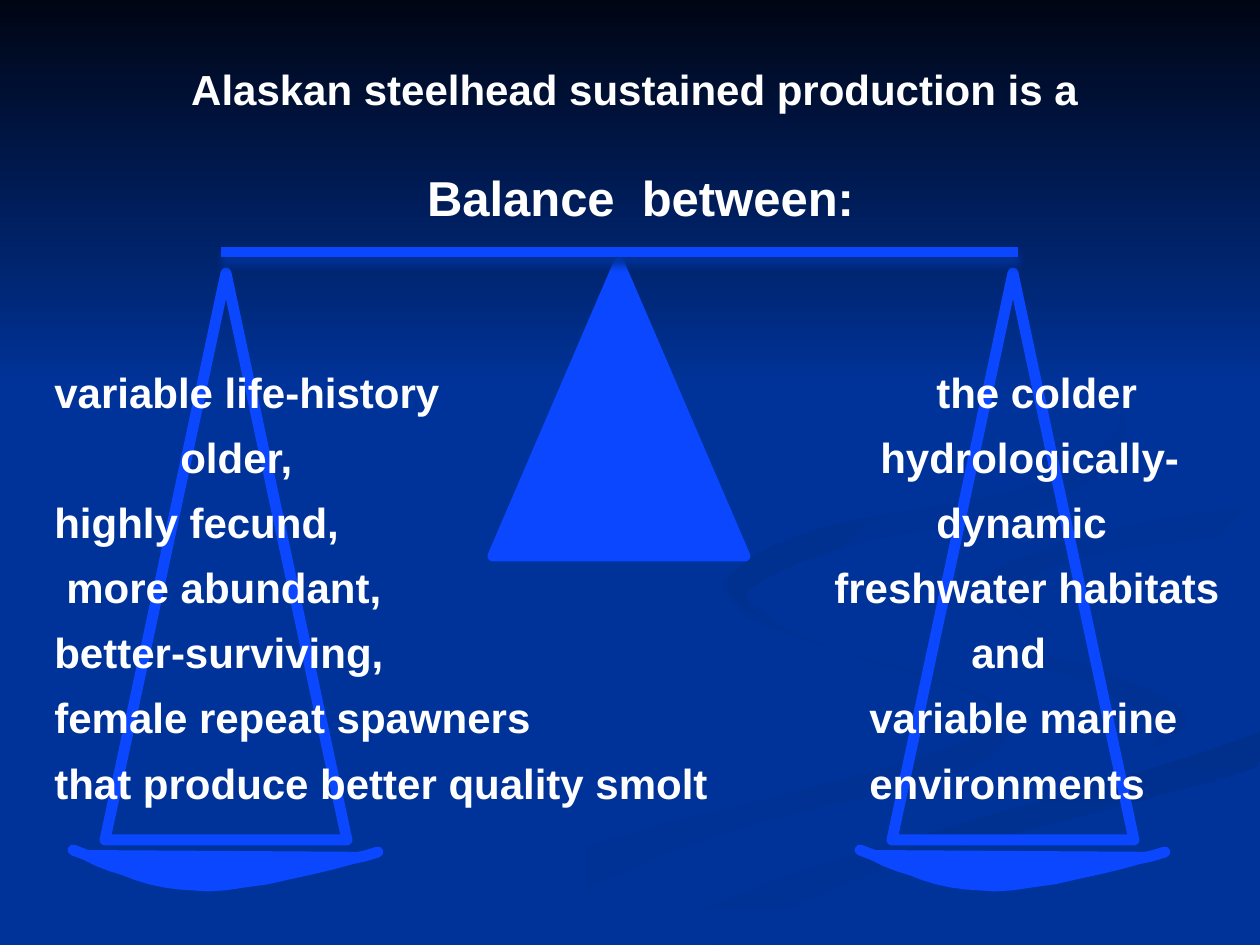
import pptx
import pptx.util
import pptx.dml.color
import pptx.enum.shapes
import pptx.enum.text
import pptx.oxml
import pptx.oxml.ns

PX = 914400 / 126
WIDE, HIGH = 1260, 945
THEME = {
    "back": "003399", "night": "000514", "scale": "0A47FF", "text": "FFFFFF",
    "dim": "003193", "deep": "002F8C", "font": "Arial",
    "body": 24, "head": 28, "line": 6.25, "gap": 8.4,
}

# Background swirls: first colour, last colour, clockwise angle, knots in px
SWIRLS = [
    ("back", "dim", 0, [
        (985, 697), (809, 639), (725, 578), (759, 624), (934, 679), (990, 713),
        (916, 759), (577, 849), (378, 944), (455, 944), (711, 838), (953, 774),
        (1008, 732)]),
    ("back", "dim", 45, [
        (1188, 718), (1096, 668), (955, 627), (912, 585), (965, 645),
        (1094, 685), (1157, 732), (1126, 762)]),
    ("deep", "back", 90, [
        (635, 944), (719, 944), (876, 872), (1257, 767), (1257, 732),
        (1004, 804), (794, 873)]),
    ("back", "back", 0, [
        (914, 585), (999, 641), (1140, 680), (1187, 730), (1024, 788),
        (601, 944), (794, 873), (1259, 732), (1259, 678), (1048, 627),
        (985, 583), (1090, 534), (1259, 507), (1259, 488), (993, 532)]),
    ("dim", "back", 45, [
        (985, 580), (1041, 625), (1014, 595), (1082, 558), (1257, 529),
        (1257, 507), (1090, 534)]),
    ("deep", "back", 45, [
        (861, 542), (1040, 507), (1126, 433), (1062, 347), (961, 294),
        (1066, 352), (1120, 422), (1031, 486), (818, 529), (727, 582),
        (784, 630), (747, 592)]),
]
BAND = (0, 0, WIDE, 388)
BEAM = (221, 252, 1018, 252)
STAND = (493, 263, 252, 293)
ARMS = [892, 105]                      # left edges of the hanging triangles
HANGER = (273, 242, 567)               # top, width, height
PAN = [[(-32, 850), (10, 868), (51, 886), (103, 886)],
       [(103, 886), (153, 886), (273, 852), (273, 852)]]

BOX = (42, 53, 1197, 775)
HEADS = [("Alaskan steelhead sustained production is a ", "body", 0),
         ("Balance  between:", "head", 31)]
# Left text, its offset, right text, its offset
ROWS = [
    ("variable life-history", 0, "the colder", 882),
    ("older,", 126, "hydrologically-", 826),
    ("highly fecund,", 0, "dynamic", 882),
    ("more abundant,", 12, "freshwater habitats", 780),
    ("better-surviving,", 0, "and", 917),
    ("female repeat spawners", 0, "variable marine", 815),
    ("that produce better quality smolt", 0, "environments", 815),
]
ROW_TOP = 80                           # points between heading and rows


def emu(*vals):
    return [round(v * PX) for v in vals]


def rgb(name):
    return pptx.dml.color.RGBColor.from_string(THEME[name])


def xml(tag, body="", **attrs):
    pairs = "".join(f' {k}="{v}"' for k, v in attrs.items())
    return pptx.oxml.parse_xml(
        f'<a:{tag} {pptx.oxml.ns.nsdecls("a")}{pairs}>{body}</a:{tag}>')


def blend(shape, first, last, angle):
    shape.shadow.inherit = False
    shape.line.fill.background()
    if first == last:
        shape.fill.solid()
        shape.fill.fore_color.rgb = rgb(first)
        return
    shape.fill.gradient()
    shape.fill.gradient_angle = -angle % 360
    for stop, tone, pos in zip(shape.fill.gradient_stops, (first, last), (0, 1)):
        stop.color.rgb = rgb(tone)
        stop.position = pos


def stroke(shape):
    shape.line.color.rgb = rgb("scale")
    shape.line.width = pptx.util.Pt(THEME["line"])


def dress(shape, solid):
    """Give a scale part its rounded outline and, if solid, its fill."""
    shape.shadow.inherit = False
    if solid:
        shape.fill.solid()
        shape.fill.fore_color.rgb = rgb("scale")
    else:
        shape.fill.background()
    stroke(shape)
    line = shape._element.spPr.find(pptx.oxml.ns.qn("a:ln"))
    line.set("cap", "rnd")
    line.append(xml("round"))


def outline(shapes, pts, close):
    pen = shapes.build_freeform(*pts[0], scale=PX)
    pen.add_line_segments(pts[1:], close=close)
    return pen.convert_to_shape()


def curve(a, b, c, d, steps=10):
    """Points along a cubic Bezier curve."""
    for i in range(steps + 1):
        t = i / steps
        u = 1 - t
        yield tuple(u**3 * p + 3 * u * u * t * q + 3 * u * t * t * r + t**3 * s
                    for p, q, r, s in zip(a, b, c, d))


def smooth(knots):
    """Points along a closed smooth curve through the knots, kept on the slide."""
    pts = []
    for i, b in enumerate(knots):
        a, c, d = (knots[(i + k) % len(knots)] for k in (-1, 1, 2))
        out = [q + (r - p) / 6 for p, q, r in zip(a, b, c)]
        into = [q - (r - p) / 6 for p, q, r in zip(b, c, d)]
        pts += [(min(x, WIDE), min(y, HIGH)) for x, y in curve(b, out, into, c)]
    return pts


def write(par, text, size, gap, tabs=()):
    if tabs:
        stops = "".join(f'<a:tab pos="{p}" algn="l"/>' for p in emu(*tabs))
        par._p.get_or_add_pPr().append(xml("tabLst", stops))
    else:
        par.alignment = pptx.enum.text.PP_ALIGN.CENTER
    par.space_before = pptx.util.Pt(gap)
    run = par.add_run()
    run.text = text
    look = {"name": THEME["font"], "size": pptx.util.Pt(THEME[size]), "bold": True}
    for key, val in look.items():
        setattr(run.font, key, val)
    run.font.color.rgb = rgb("text")


def main():
    deck = pptx.Presentation()
    deck.slide_width, deck.slide_height = emu(WIDE, HIGH)
    slide = deck.slides.add_slide(deck.slide_layouts[6])
    slide.background.fill.solid()
    slide.background.fill.fore_color.rgb = rgb("back")
    shapes = slide.shapes
    kind = pptx.enum.shapes.MSO_SHAPE

    for first, last, angle, knots in SWIRLS:
        blend(outline(shapes, smooth(knots), True), first, last, angle)
    blend(shapes.add_shape(kind.RECTANGLE, *emu(*BAND)), "night", "back", 90)

    top, wide, high = HANGER
    for left in ARMS:
        dress(shapes.add_shape(kind.ISOSCELES_TRIANGLE,
                               *emu(left, top, wide, high)), False)
        pan = [(left + x, y) for part in PAN for x, y in curve(*part)]
        dress(outline(shapes, pan, False), True)
    dress(shapes.add_shape(kind.ISOSCELES_TRIANGLE, *emu(*STAND)), True)

    beam = shapes.add_connector(pptx.enum.shapes.MSO_CONNECTOR.STRAIGHT, *emu(*BEAM))
    stroke(beam)
    drop = pptx.util.Pt(4)
    beam._element.spPr.append(xml(
        "effectLst", f'<a:outerShdw blurRad="{drop}" dist="{drop}" dir="5400000">'
        f'<a:srgbClr val="{THEME["back"]}"/></a:outerShdw>'))

    frame = shapes.add_textbox(*emu(*BOX)).text_frame
    frame.word_wrap = True
    frame.margin_top = emu(10)[0]
    lines = [(text, size, gap, ()) for text, size, gap in HEADS]
    for i, (near, start, far, stop) in enumerate(ROWS):
        lead = "\t" if start else ""
        tabs = [start, stop] if start else [stop]
        lines.append((f"{lead}{near}\t{far}", "body",
                      THEME["gap"] if i else ROW_TOP, tabs))
    for i, line in enumerate(lines):
        write(frame.add_paragraph() if i else frame.paragraphs[0], *line)

    deck.save("out.pptx")


if __name__ == "__main__":
    main()
